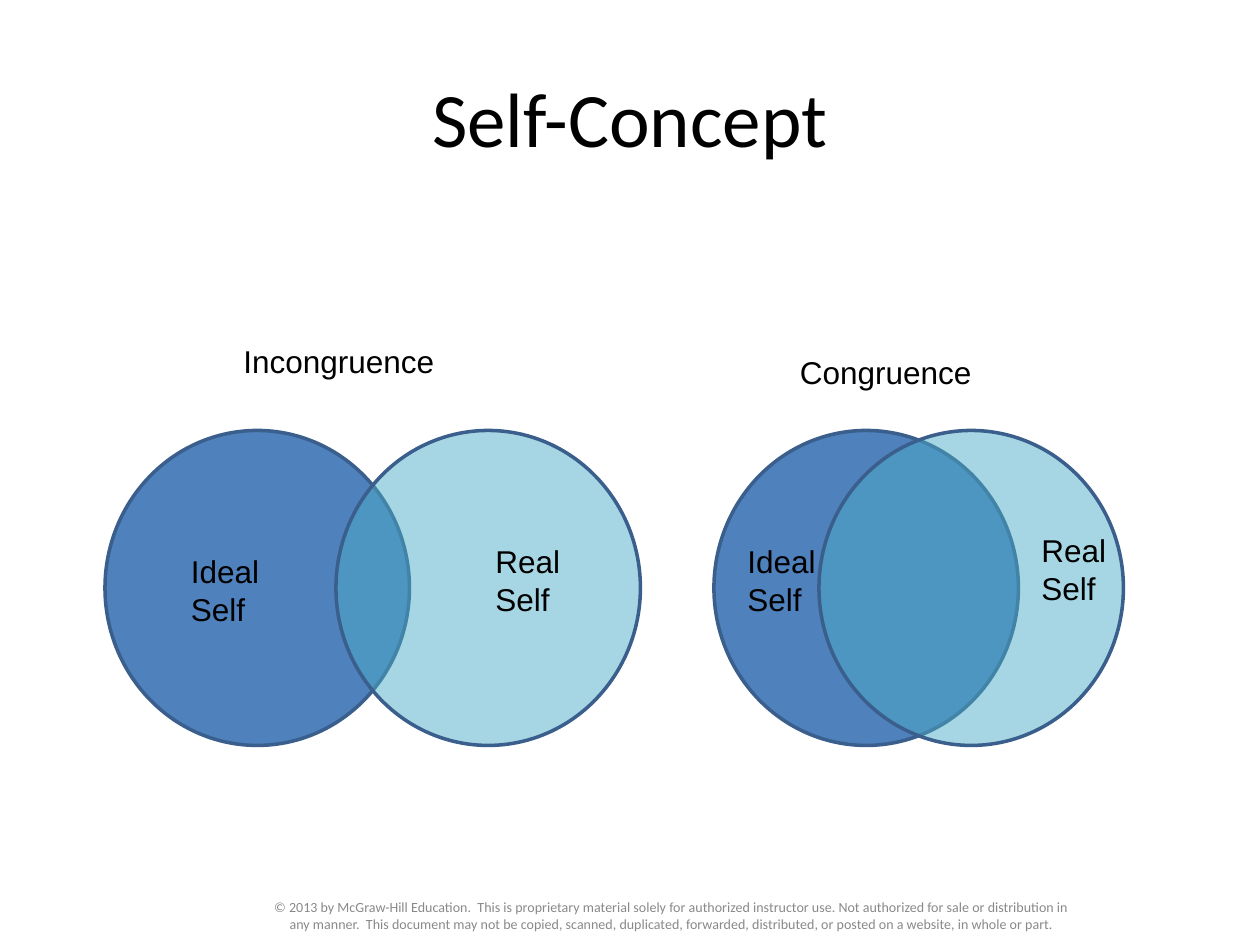
from typing import NamedTuple

from lxml import etree
from pptx import Presentation
from pptx.dml.color import RGBColor
from pptx.enum.shapes import MSO_SHAPE
from pptx.enum.text import MSO_ANCHOR, PP_ALIGN
from pptx.oxml.ns import qn
from pptx.slide import Slide
from pptx.util import Emu, Pt

EMU_PER_PX = 7620
PAGE_WIDTH, PAGE_HEIGHT = 1200, 900
CIRCLE_TOP, CIRCLE_WIDTH, CIRCLE_HEIGHT = 410, 290, 300
REAL_SELF_OPACITY = 49

BLACK = RGBColor(0x00, 0x00, 0x00)
GRAY = RGBColor(0x89, 0x89, 0x89)
IDEAL_BLUE = RGBColor(0x4F, 0x81, 0xBD)
REAL_TEAL = RGBColor(0x4B, 0xAC, 0xC6)
OUTLINE_BLUE = RGBColor(0x3A, 0x5F, 0x8C)

OVAL = MSO_SHAPE.OVAL
TOP, MIDDLE = MSO_ANCHOR.TOP, MSO_ANCHOR.MIDDLE
LEFT, CENTER = PP_ALIGN.LEFT, PP_ALIGN.CENTER

COPYRIGHT = (
    "© 2013 by McGraw-Hill Education.  This is proprietary material solely for "
    "authorized instructor use. Not authorized for sale or distribution in any manner.  "
    "This document may not be copied, scanned, duplicated, forwarded, distributed, "
    "or posted on a website, in whole or part."
)


class Area(NamedTuple):
    left: int
    top: int
    width: int
    height: int

    def to_emu(self) -> list[Emu]:
        return [Emu(length * EMU_PER_PX) for length in self]


class Label(NamedTuple):
    text: str
    area: Area


class Diagram(NamedTuple):
    ideal_left: int
    real_left: int
    labels: tuple[Label, ...]


DIAGRAMS = (
    Diagram(100, 320, (
        Label("Incongruence", Area(220, 320, 260, 48)),
        Label("Ideal\nSelf", Area(170, 520, 110, 92)),
        Label("Real\nSelf", Area(460, 510, 100, 92)),
    )),
    Diagram(680, 780, (
        Label("Congruence", Area(750, 330, 270, 48)),
        Label("Ideal\nSelf", Area(700, 510, 90, 92)),
        Label("Real\nSelf", Area(980, 500, 90, 92)),
    )),
)


def add_text(page: Slide, text: str, area: Area, *, size: int = 18, font: str = "Arial",
             color: RGBColor = BLACK, align: PP_ALIGN = LEFT,
             anchor: MSO_ANCHOR = TOP) -> None:
    frame = page.shapes.add_textbox(*area.to_emu()).text_frame
    frame.word_wrap = True
    frame.vertical_anchor = anchor
    frame.text = text
    for para in frame.paragraphs:
        para.alignment = align
        para.font.size = Pt(size)
        para.font.name = font
        para.font.color.rgb = color


def add_circle(page: Slide, left: int, color: RGBColor, opacity: int = 100) -> None:
    area = Area(left, CIRCLE_TOP, CIRCLE_WIDTH, CIRCLE_HEIGHT)
    circle = page.shapes.add_shape(OVAL, *area.to_emu())
    circle.shadow.inherit = False
    circle.fill.solid()
    circle.fill.fore_color.rgb = color
    circle.line.color.rgb = OUTLINE_BLUE
    circle.line.width = Pt(2)
    if opacity < 100:
        fill_color = circle.element.spPr.find(qn("a:solidFill")).find(qn("a:srgbClr"))
        etree.SubElement(fill_color, qn("a:alpha"), val=str(opacity * 1000))


def add_diagram(page: Slide, diagram: Diagram) -> None:
    add_circle(page, diagram.ideal_left, IDEAL_BLUE)
    add_circle(page, diagram.real_left, REAL_TEAL, REAL_SELF_OPACITY)
    for label in diagram.labels:
        add_text(page, label.text, label.area)


def main() -> None:
    deck = Presentation()
    deck.slide_width = Emu(PAGE_WIDTH * EMU_PER_PX)
    deck.slide_height = Emu(PAGE_HEIGHT * EMU_PER_PX)
    page = deck.slides.add_slide(deck.slide_layouts[6])
    add_text(page, COPYRIGHT, Area(240, 850, 800, 60),
             size=8, font="Calibri", color=GRAY, align=CENTER)
    add_text(page, "Self-Concept", Area(60, 36, 1080, 150),
             size=44, font="Calibri", align=CENTER, anchor=MIDDLE)
    for diagram in DIAGRAMS:
        add_diagram(page, diagram)
    deck.save("out.pptx")


if __name__ == "__main__":
    main()
